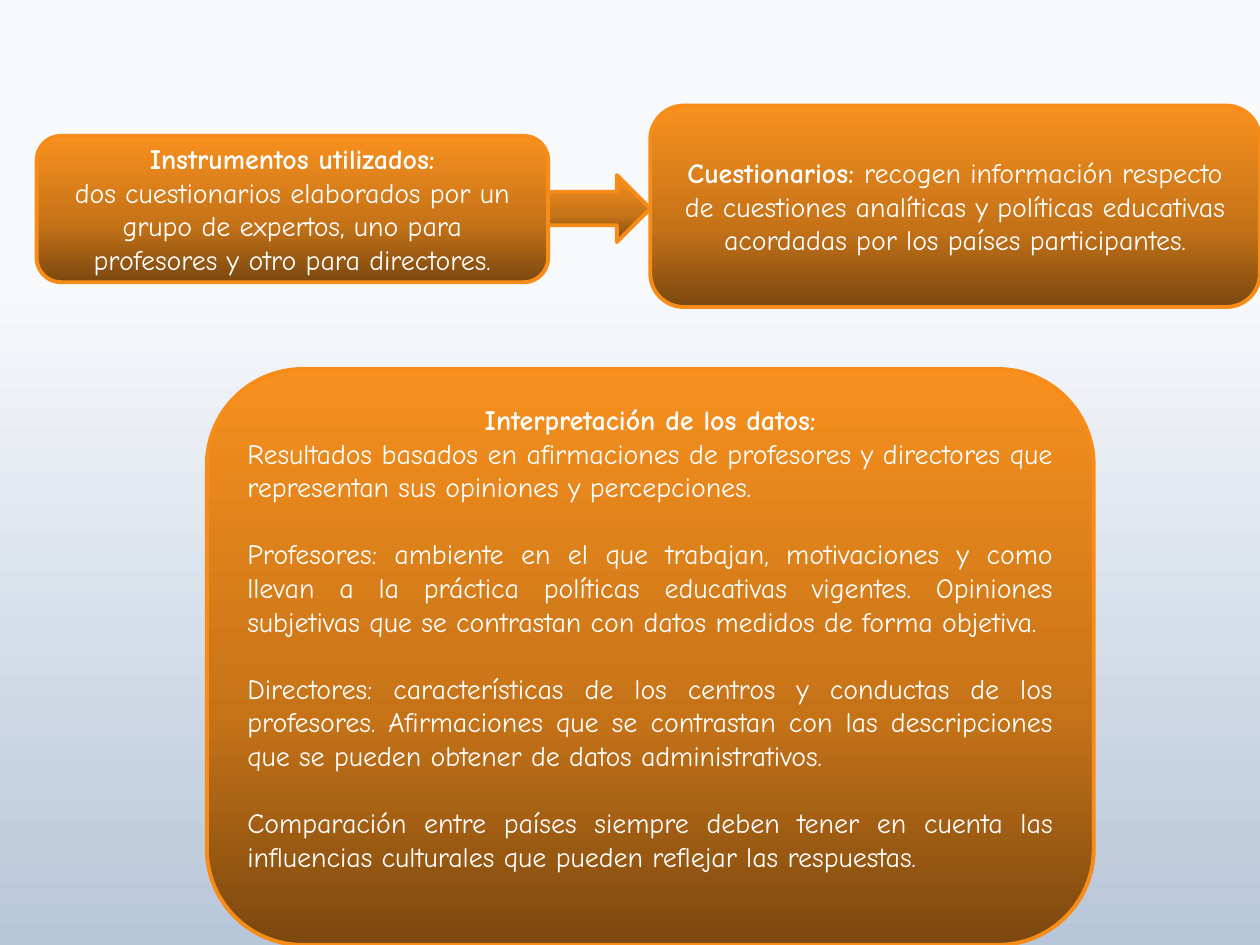
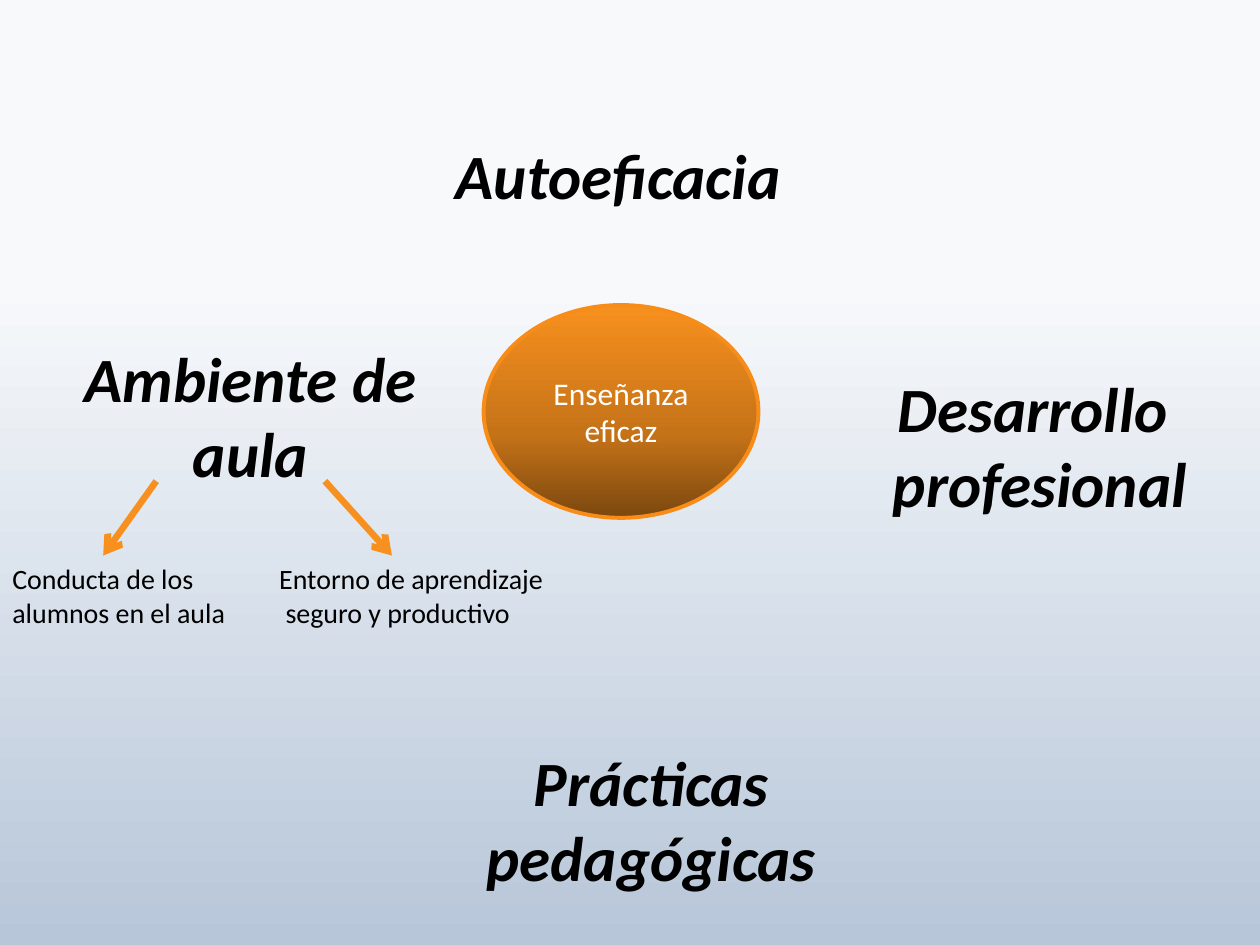
from dataclasses import dataclass

from lxml import etree
from pptx import Presentation
from pptx import util as u
from pptx.dml.color import RGBColor
from pptx.enum import shapes, text
from pptx.oxml.ns import qn


@dataclass(frozen=True)
class Theme:
    backdrop: tuple = ((30, "F7F9FB"), (100, "B7C6D9"))
    panel: tuple = ((0, "F7901E"), (60, "C67318"), (100, "7B480F"))
    outline: str = "F78D18"
    arrow: str = "F7901E"
    light: str = "FFFFFF"
    dark: str = "000000"
    rounded_font: str = "Comic Neue"
    plain_font: str = "Calibri"
    body: int = 16
    centre: int = 18
    heading: int = 36
    gap: float = 19.2
    outline_width: float = 2.25
    arrow_width: float = 3.75


THEME = Theme()
CENTER = text.PP_ALIGN.CENTER
LEFT = text.PP_ALIGN.LEFT
JUSTIFY = text.PP_ALIGN.JUSTIFY


def paint_gradient(fill, stops, holder):
    fill.gradient()
    fill.gradient_angle = 270
    stop_list = holder.find(".//" + qn("a:gsLst"))
    for stop in list(stop_list):
        stop_list.remove(stop)
    for position, colour in stops:
        stop = etree.SubElement(stop_list, qn("a:gs"), pos=str(position * 1000))
        etree.SubElement(stop, qn("a:srgbClr"), val=colour)


def add_page(deck):
    page = deck.slides.add_slide(deck.slide_layouts[6])
    paint_gradient(page.background.fill, THEME.backdrop, page.element)
    return page


def add_para(frame, spans, font, size, colour, align, first=False, italic=False, gap=0):
    para = frame.paragraphs[0] if first else frame.add_paragraph()
    para.alignment = align
    para.space_before = u.Pt(gap)
    for words, bold in spans:
        span = para.add_run()
        span.text = words
        span.font.name = font
        span.font.size = u.Pt(size)
        span.font.bold = bold
        span.font.italic = italic
        span.font.color.rgb = RGBColor.from_string(colour)


def add_panel(page, kind, place):
    panel = page.shapes.add_shape(kind, *map(u.Cm, place))
    panel.shadow.inherit = False
    paint_gradient(panel.fill, THEME.panel, panel.element.spPr)
    panel.line.color.rgb = RGBColor.from_string(THEME.outline)
    panel.line.width = u.Pt(THEME.outline_width)
    panel.text_frame.word_wrap = True
    panel.text_frame.vertical_anchor = text.MSO_ANCHOR.MIDDLE
    return panel


def add_card(page, place, paragraphs, bottom=0.13):
    frame = add_panel(page, shapes.MSO_SHAPE.ROUNDED_RECTANGLE, place).text_frame
    frame.margin_bottom = u.Cm(bottom)
    for index, (spans, align, gap) in enumerate(paragraphs):
        add_para(frame, spans, THEME.rounded_font, THEME.body, THEME.light,
                 align, index == 0, gap=gap)


def add_label(page, place, lines, size, align=LEFT, wrap=False, strong=False):
    frame = page.shapes.add_textbox(*map(u.Cm, place)).text_frame
    frame.word_wrap = wrap
    frame.auto_size = text.MSO_AUTO_SIZE.SHAPE_TO_FIT_TEXT
    for index, line in enumerate(lines):
        add_para(frame, [(line, strong)], THEME.plain_font, size, THEME.dark,
                 align, index == 0, italic=strong)


def add_heading(page, place, lines, align=CENTER, wrap=True):
    add_label(page, place, lines, THEME.heading, align, wrap, strong=True)


def add_arrow(page, start, end):
    arrow = page.shapes.add_connector(
        shapes.MSO_CONNECTOR.STRAIGHT, *map(u.Cm, (*start, *end)))
    arrow.line.color.rgb = RGBColor.from_string(THEME.arrow)
    arrow.line.width = u.Pt(THEME.arrow_width)
    etree.SubElement(arrow.line._get_or_add_ln(), qn("a:tailEnd"), type="arrow")
    etree.SubElement(arrow._element.spPr, qn("a:effectLst"))


def build_method_page(deck):
    page = add_page(deck)
    add_card(page, (0.74, 2.74, 10.31, 2.95), [
        ([("Instrumentos utilizados:", True)], CENTER, 0),
        ([("dos cuestionarios elaborados por un grupo de expertos, uno para "
           "profesores y otro para directores.", False)], CENTER, 0),
    ])
    add_panel(page, shapes.MSO_SHAPE.RIGHT_ARROW, (11.05, 3.53, 2.06, 1.35))
    add_card(page, (13.11, 2.13, 12.29, 4.06), [
        ([("Cuestionarios: ", True),
          ("recogen información respecto de cuestiones analíticas y políticas "
           "educativas acordadas por los países participantes.", False)], CENTER, 0),
    ])
    findings = (
        "Resultados basados en afirmaciones de profesores y directores que "
        "representan sus opiniones y percepciones.",
        "Profesores: ambiente en el que trabajan, motivaciones y como llevan a la "
        "práctica políticas educativas vigentes. Opiniones subjetivas que se "
        "contrastan con datos medidos de forma objetiva.",
        "Directores: características de los centros y conductas de los profesores. "
        "Afirmaciones que se contrastan con las descripciones que se pueden "
        "obtener de datos administrativos.",
        "Comparación entre países siempre deben tener en cuenta las influencias "
        "culturales que pueden reflejar las respuestas.",
    )
    paragraphs = [([("Interpretación de los datos:", True)], CENTER, 0)]
    for index, finding in enumerate(findings):
        paragraphs.append(([(finding, False)], JUSTIFY, THEME.gap if index else 0))
    add_card(page, (4.17, 7.44, 17.88, 11.61), paragraphs, bottom=0.9)


def build_teaching_page(deck):
    page = add_page(deck)
    add_heading(page, (8.94, 2.62, 7.62, 1.8), ["Autoeficacia"], LEFT)
    core = add_panel(page, shapes.MSO_SHAPE.OVAL, (9.75, 6.15, 5.54, 4.29))
    add_para(core.text_frame, [("Enseñanza eficaz", False)], THEME.plain_font,
             THEME.centre, THEME.light, CENTER, first=True)
    add_heading(page, (1.14, 6.71, 7.82, 3.33), ["Ambiente de aula"])
    add_label(page, (0, 11.2, 4.85, 1.63),
              ["Conducta de los", "alumnos en el aula"], THEME.body)
    add_label(page, (5.38, 11.2, 5.99, 1.63),
              ["Entorno de aprendizaje", " seguro y productivo"], THEME.body)
    for start_x, end_x in ((3.15, 2.08), (6.55, 7.9)):
        add_arrow(page, (start_x, 9.7), (end_x, 11.2))
    add_heading(page, (17.5, 7.32, 6.93, 3.33), ["Desarrollo ", "profesional"], wrap=False)
    add_heading(page, (8.94, 14.86, 8.38, 3.33), ["Prácticas pedagógicas"])


def main():
    deck = Presentation()
    deck.slide_width = u.Cm(25.4)
    deck.slide_height = u.Cm(19.05)
    build_method_page(deck)
    build_teaching_page(deck)
    deck.save("out.pptx")


if __name__ == "__main__":
    main()
